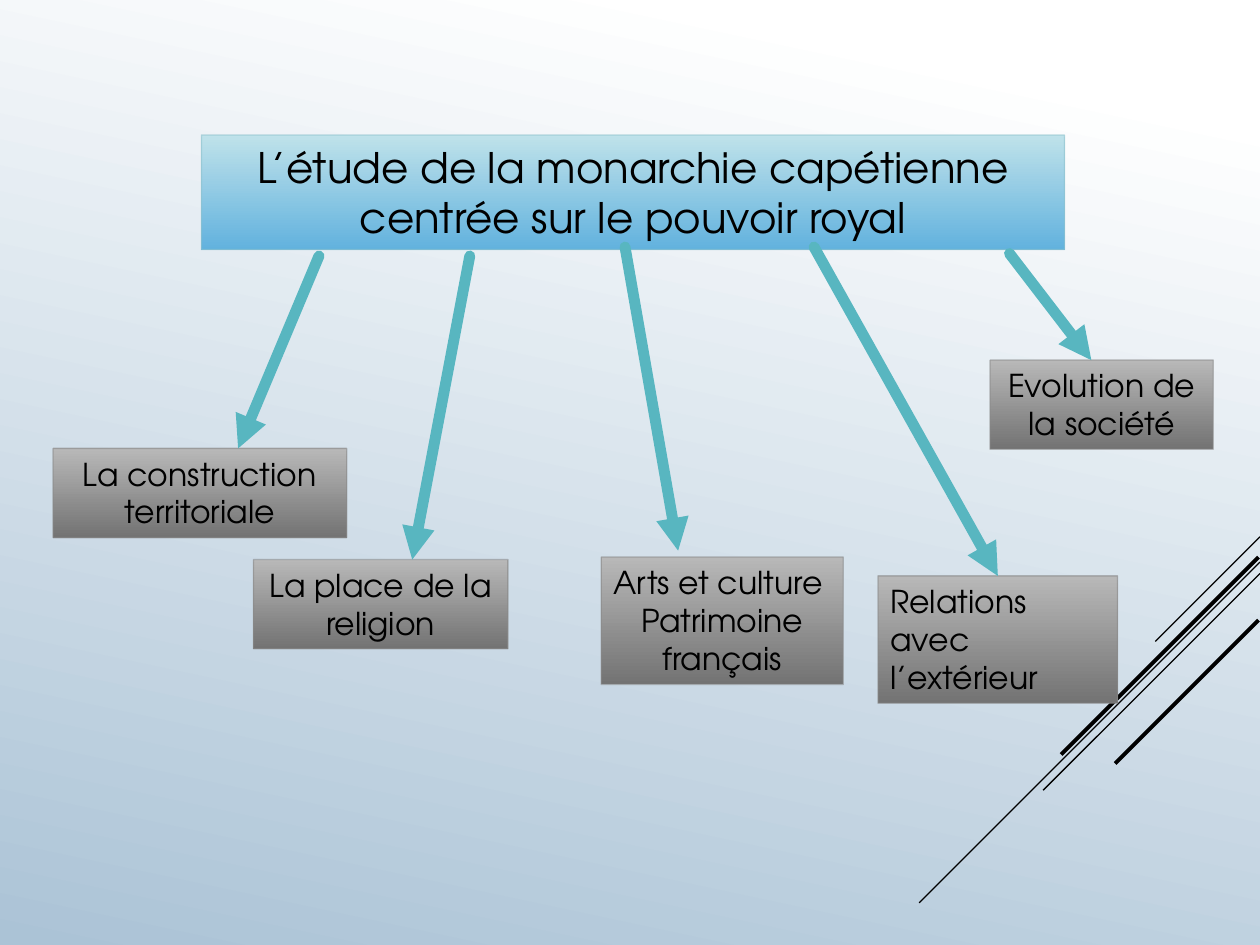
import dataclasses

import pptx
import pptx.dml.color
import pptx.enum.shapes
import pptx.enum.text
import pptx.oxml
import pptx.oxml.ns
import pptx.util

Cm = pptx.util.Cm
LEFT = pptx.enum.text.PP_ALIGN.LEFT
CENTER = pptx.enum.text.PP_ALIGN.CENTER


@dataclasses.dataclass(frozen=True)
class Theme:
    """Colours, font and sizes of the slide."""

    font: str = "TeX Gyre Adventor"
    text: str = "000000"
    background: tuple = ("FFFFFF", "ABC3D6")
    title_fill: tuple = ("BFE2EA", "62B2DE")
    title_line: str = "8EC2CD"
    topic_fill: tuple = ("B8B8B8", "737373")
    topic_line: str = "898989"
    arrow: str = "58B6C0"
    title_size: int = 24
    topic_size: int = 18
    border_width: float = 0.75
    arrow_width: float = 6.25


THEME = Theme()

TITLE = "L’étude de la monarchie capétienne centrée sur le pouvoir royal"
TITLE_BOX = (4.06, 2.72, 17.4, 2.31)

TOPICS = {
    "territory": ((1.07, 9.04, 5.92, 1.8), [("La construction territoriale", CENTER)]),
    "religion": ((5.11, 11.28, 5.13, 1.8), [("La place de la religion", CENTER)]),
    "arts": (
        (12.12, 11.23, 4.88, 2.57),
        [("Arts et culture", LEFT), ("Patrimoine français", CENTER)],
    ),
    "relations": ((17.7, 11.61, 4.83, 2.57), [("Relations avec l’extérieur", LEFT)]),
    "society": ((19.96, 7.26, 4.5, 1.8), [("Evolution de la société", CENTER)]),
}

ARROWS = {
    "territory": ((6.43, 5.16), (4.8, 9.04)),
    "religion": ((9.47, 5.16), (8.31, 11.28)),
    "relations": ((16.41, 4.98), (20.12, 11.61)),
    "arts": ((12.6, 4.98), (13.67, 11.1)),
    "society": ((20.35, 5.11), (22, 7.26)),
}

DIAGONALS = [
    (25.4, 10.82, 2.11, 0.75),
    (25.4, 11.33, 6.87, 0.75),
    (25.4, 11.56, 4.37, 0.75),
    (25.37, 11.23, 3.98, 2.25),
    (25.37, 12.5, 2.89, 2.25),
]


def rgb(value):
    """Turn a hex string into a colour."""
    return pptx.dml.color.RGBColor.from_string(value)


def apply_format(target, values):
    """Set each attribute in values on target."""
    for name, value in values.items():
        setattr(target, name, value)


def add_xml(parent, tag, **attributes):
    """Append a DrawingML element to parent."""
    element = pptx.oxml.parse_xml(f"<a:{tag} {pptx.oxml.ns.nsdecls('a')}/>")
    for name, value in attributes.items():
        element.set(name, value)
    parent.append(element)


def set_gradient(fill, colours, angle=270, start=0):
    """Give fill a two-colour linear gradient."""
    fill.gradient()
    fill.gradient_angle = angle
    for stop, colour, position in zip(fill.gradient_stops, colours, (start, 1)):
        stop.color.rgb = rgb(colour)
        stop.position = position


def format_box(shape, box, paragraphs, size, fill, line):
    """Place a box and set its text, gradient and faint border."""
    apply_format(shape, dict(zip(("left", "top", "width", "height"), map(Cm, box))))
    set_gradient(shape.fill, fill)
    shape.line.width = pptx.util.Pt(THEME.border_width)
    shape.line.color.rgb = rgb(line)
    border = shape.line.fill._xPr.find(".//" + pptx.oxml.ns.qn("a:srgbClr"))
    add_xml(border, "alpha", val="60000")
    shape.shadow.inherit = False
    frame = shape.text_frame
    frame.text = "\n".join(text for text, _ in paragraphs)
    apply_format(frame, {
        "word_wrap": True,
        "auto_size": pptx.enum.text.MSO_AUTO_SIZE.SHAPE_TO_FIT_TEXT,
        "vertical_anchor": pptx.enum.text.MSO_ANCHOR.TOP,
    })
    for paragraph, (_, alignment) in zip(frame.paragraphs, paragraphs):
        paragraph.alignment = alignment
        font = paragraph.runs[0].font
        apply_format(font, {"name": THEME.font, "size": pptx.util.Pt(size)})
        font.color.rgb = rgb(THEME.text)


def add_title(slide):
    """Turn the title placeholder into the central box."""
    format_box(slide.shapes.title, TITLE_BOX, [(TITLE, CENTER)],
               THEME.title_size, THEME.title_fill, THEME.title_line)


def add_topic(slide, box, paragraphs):
    """Add one grey topic box."""
    shape = slide.shapes.add_shape(
        pptx.enum.shapes.MSO_SHAPE.RECTANGLE, *map(Cm, box))
    format_box(shape, box, paragraphs,
               THEME.topic_size, THEME.topic_fill, THEME.topic_line)
    return shape


def add_line(slide, start, end, colour, width):
    """Add a straight line without shadow."""
    connector = slide.shapes.add_connector(
        pptx.enum.shapes.MSO_CONNECTOR.STRAIGHT, *map(Cm, (*start, *end)))
    connector.line.width = pptx.util.Pt(width)
    connector.line.color.rgb = rgb(colour)
    add_xml(connector._element.spPr, "effectLst")
    return connector


def add_arrow(slide, start, end):
    """Add a thick round-capped arrow."""
    connector = add_line(slide, start, end, THEME.arrow, THEME.arrow_width)
    line = connector.line._get_or_add_ln()
    line.set("cap", "rnd")
    add_xml(line, "round")
    add_xml(line, "tailEnd", type="triangle")
    return connector


def main():
    """Build and save the slide."""
    presentation = pptx.Presentation()
    apply_format(presentation, {"slide_width": Cm(25.4), "slide_height": Cm(19.05)})
    slide = presentation.slides.add_slide(presentation.slide_layouts[5])
    set_gradient(slide.background.fill, THEME.background, angle=258, start=0.1)
    for x, y, run, width in DIAGONALS:
        add_line(slide, (x, y), (x - run, y + run), THEME.text, width)
    add_title(slide)
    topics = {name: add_topic(slide, *topic) for name, topic in TOPICS.items()}
    arrows = {name: add_arrow(slide, *ends) for name, ends in ARROWS.items()}
    arrows["relations"].end_connect(topics["relations"], 0)
    presentation.save("out.pptx")


if __name__ == "__main__":
    main()
